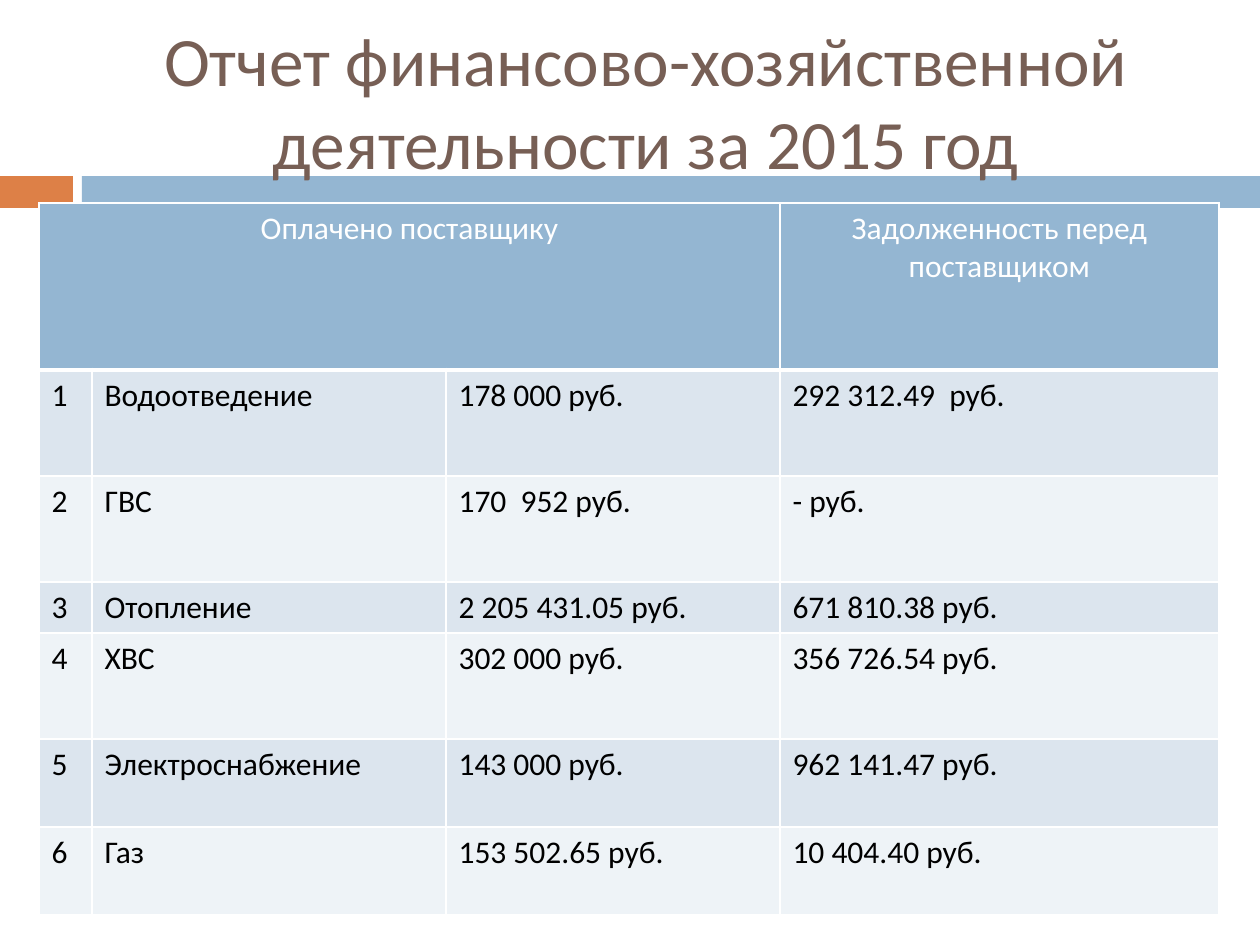
from lxml.etree import SubElement
from pptx import Presentation
from pptx.dml.color import RGBColor
from pptx.enum.shapes import MSO_SHAPE
from pptx.enum.text import MSO_ANCHOR, MSO_AUTO_SIZE, PP_ALIGN
from pptx.oxml.ns import qn
from pptx.util import Pt

PX = 914400 / 126
FONT = "Calibri"
BLUE, ORANGE, BROWN, WHITE, BLACK = "94B6D2", "DD8047", "775F55", "FFFFFF", "000000"
BANDS = ("DCE5EE", "EEF3F7")

TITLE = "Отчет финансово-хозяйственной деятельности за 2015 год"
PAID, DEBT = "Оплачено поставщику", "Задолженность перед поставщиком"
SERVICES = [
    ("Водоотведение", "178 000 руб.", "292 312.49  руб."),
    ("ГВС", "170  952 руб.", "- руб."),
    ("Отопление", "2 205 431.05 руб.", "671 810.38 руб."),
    ("ХВС", "302 000 руб.", "356 726.54 руб."),
    ("Электроснабжение", "143 000 руб.", "962 141.47 руб."),
    ("Газ", "153 502.65 руб.", "10 404.40 руб."),
]
COLUMN_WIDTHS = (53, 354, 334, 439)
ROW_HEIGHTS = (167, 106, 106, 51, 106, 88, 88)


def px(length):
    return round(length * PX)


def color(value):
    return RGBColor.from_string(value)


def write(frame, text, size, text_color, align):
    para = frame.paragraphs[0]
    para.alignment = align
    span = para.add_run()
    span.text = text
    for name, value in {"name": FONT, "size": Pt(size), "bold": False}.items():
        setattr(span.font, name, value)
    span.font.color.rgb = color(text_color)


def add_title(page, left, top, width, height):
    title = page.shapes.title
    place = {"left": left, "top": top, "width": width, "height": height}
    for name, value in place.items():
        setattr(title, name, px(value))
    frame = title.text_frame
    layout = {"word_wrap": True, "auto_size": MSO_AUTO_SIZE.NONE,
              "vertical_anchor": MSO_ANCHOR.MIDDLE}
    for name, value in layout.items():
        setattr(frame, name, value)
    write(frame, TITLE, 39.6, BROWN, PP_ALIGN.CENTER)


def add_stripe(page, left, top, width, height):
    """Draw the orange and blue bars behind the title."""
    accent, gap = 73, 9
    bars = [(0, accent, ORANGE), (accent + gap, width - accent - gap, BLUE)]
    for offset, bar_width, fill in bars:
        bar = page.shapes.add_shape(MSO_SHAPE.RECTANGLE, px(left + offset), px(top),
                                    px(bar_width), px(height))
        bar.shadow.inherit = False
        bar.fill.solid()
        bar.fill.fore_color.rgb = color(fill)
        bar.line.fill.background()
        page.shapes.title.element.addprevious(bar.element)


def set_borders(cell, bottom):
    properties = cell._tc.get_or_add_tcPr()
    widths = {"a:lnL": 1, "a:lnR": 1, "a:lnT": 1, "a:lnB": bottom}
    for index, (tag, width) in enumerate(widths.items()):
        line = SubElement(properties, qn(tag), w=str(Pt(width)))
        fill = SubElement(line, qn("a:solidFill"))
        SubElement(fill, qn("a:srgbClr"), val=WHITE)
        properties.insert(index, line)


def add_payments(page, left, top):
    rows = [(PAID, "", "", DEBT)]
    rows += [(str(number), *service) for number, service in enumerate(SERVICES, 1)]
    table = page.shapes.add_table(len(rows), len(COLUMN_WIDTHS), px(left), px(top),
                                  px(sum(COLUMN_WIDTHS)), px(sum(ROW_HEIGHTS))).table
    for column, width in zip(table.columns, COLUMN_WIDTHS):
        column.width = px(width)
    for row, height in zip(table.rows, ROW_HEIGHTS):
        row.height = px(height)
    table.cell(0, 0).merge(table.cell(0, 2))

    for r, texts in enumerate(rows):
        header = r == 0
        fill = BLUE if header else BANDS[(r - 1) % 2]
        text_color = WHITE if header else BLACK
        align = PP_ALIGN.CENTER if header else PP_ALIGN.LEFT
        for c, text in enumerate(texts):
            cell = table.cell(r, c)
            cell.fill.solid()
            cell.fill.fore_color.rgb = color(fill)
            set_borders(cell, bottom=3 if header else 1)
            if text:
                write(cell.text_frame, text, 18, text_color, align)


def main():
    deck = Presentation()
    deck.slide_width, deck.slide_height = px(1260), px(945)
    page = deck.slides.add_slide(deck.slide_layouts[5])
    page.background.fill.solid()
    page.background.fill.fore_color.rgb = color(WHITE)
    add_title(page, 84, 32, 1124, 136)
    add_stripe(page, 0, 176, 1260, 32)
    add_payments(page, 39, 203)
    deck.save("out.pptx")


if __name__ == "__main__":
    main()
